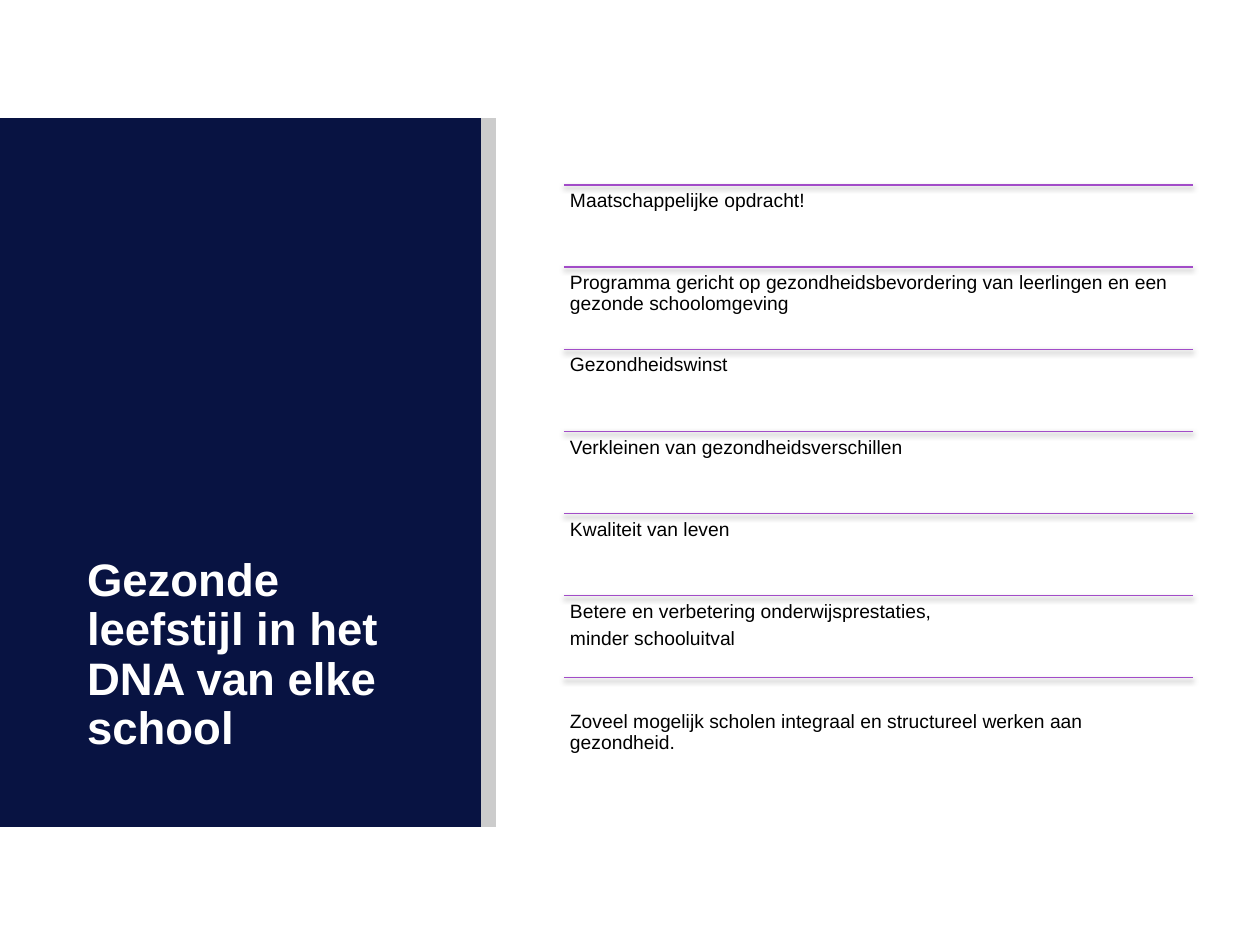
from dataclasses import dataclass

from lxml import etree
from pptx import Presentation
from pptx.dml.color import RGBColor
from pptx.enum.shapes import MSO_CONNECTOR, MSO_SHAPE
from pptx.enum.text import MSO_ANCHOR, MSO_AUTO_SIZE, PP_ALIGN
from pptx.oxml import parse_xml
from pptx.oxml.ns import nsdecls, qn
from pptx.util import Emu, Pt

RECTANGLE = MSO_SHAPE.RECTANGLE
STRAIGHT = MSO_CONNECTOR.STRAIGHT
TOP, BOTTOM = MSO_ANCHOR.TOP, MSO_ANCHOR.BOTTOM
LEFT = PP_ALIGN.LEFT
NO_AUTOFIT = MSO_AUTO_SIZE.NONE
TITLE_ONLY = 5

TITLE = "Gezonde leefstijl in het DNA van elke school"
GOALS = [
    ["Maatschappelijke opdracht!"],
    ["Programma gericht op gezondheidsbevordering van leerlingen en een gezonde schoolomgeving"],
    ["Gezondheidswinst"],
    ["Verkleinen van gezondheidsverschillen"],
    ["Kwaliteit van leven"],
    ["Betere en verbetering onderwijsprestaties,", "minder schooluitval"],
    ["Zoveel mogelijk scholen integraal en structureel werken aan gezondheid."],
]

# Left, top, width, height in px
SLIDE_SIZE = (1260, 945)
PANEL = (0, 118, 481, 709)
STRIP = (481, 118, 15, 709)
TITLE_AREA = (87, 202, 345, 558)
LIST_AREA = (564, 185, 629, 575)
INSET = 6
LAST_GOAL_DROP = 28


@dataclass(frozen=True)
class Theme:
    font: str = "Arial"
    panel: str = "081342"
    shade: str = "000000"
    strip_opacity: int = 20
    rule: str = "A24CC8"
    rule_width: float = 0.75
    title: str = "FFFFFF"
    title_size: int = 26
    body: str = "000000"
    body_size: int = 11
    line_spacing: float = 0.9
    gap: float = 3.85


THEME = Theme()


def px(length):
    return Emu(round(length * 914400 / 126))


def add_block(page, area, color, opacity=100):
    block = page.shapes.add_shape(RECTANGLE, *map(px, area))
    block.shadow.inherit = False
    block.fill.solid()
    block.fill.fore_color.rgb = RGBColor.from_string(color)
    block.line.fill.background()
    if opacity < 100:
        fill_color = block.element.spPr.find(".//" + qn("a:srgbClr"))
        etree.SubElement(fill_color, qn("a:alpha"), val=str(opacity * 1000))
    return block


def write(frame, lines, size, color, insets, anchor, bold=False, gap=0):
    """Fill a text frame; insets are left, top, right, bottom in px."""
    frame.word_wrap = True
    frame.auto_size = NO_AUTOFIT
    frame.vertical_anchor = anchor
    (frame.margin_left, frame.margin_top,
     frame.margin_right, frame.margin_bottom) = map(px, insets)
    frame.text = "\n".join(lines)
    for para in frame.paragraphs:
        para.alignment = LEFT
        para.line_spacing = THEME.line_spacing
        para.space_before = Pt(0)
        para.space_after = Pt(gap)
        for span in para.runs:
            span.font.name = THEME.font
            span.font.size = Pt(size)
            span.font.bold = bold
            span.font.color.rgb = RGBColor.from_string(color)


def add_rule(page, left, top, width):
    rule = page.shapes.add_connector(STRAIGHT, px(left), px(top), px(left + width), px(top))
    rule.line.color.rgb = RGBColor.from_string(THEME.rule)
    rule.line.width = Pt(THEME.rule_width)
    rule.element.spPr.append(parse_xml(
        f'<a:effectLst {nsdecls("a")}>'
        f'<a:outerShdw blurRad="{Pt(3.15)}" dist="{Pt(1.57)}" dir="5400000" rotWithShape="0">'
        f'<a:srgbClr val="{THEME.shade}"><a:alpha val="38000"/></a:srgbClr>'
        '</a:outerShdw></a:effectLst>'))


def add_goals(page):
    left, top, width, height = LIST_AREA
    pitch = height / len(GOALS)
    for index, lines in enumerate(GOALS):
        row_top = top + index * pitch
        drop = LAST_GOAL_DROP if index == len(GOALS) - 1 else 0
        add_rule(page, left, row_top, width)
        box = page.shapes.add_textbox(*map(px, (left, row_top, width, pitch)))
        write(box.text_frame, lines, THEME.body_size, THEME.body,
              (INSET, INSET + drop, INSET, INSET), TOP, gap=THEME.gap)


def main():
    deck = Presentation()
    deck.slide_width, deck.slide_height = map(px, SLIDE_SIZE)
    page = deck.slides.add_slide(deck.slide_layouts[TITLE_ONLY])

    title = page.shapes.title
    title.left, title.top, title.width, title.height = map(px, TITLE_AREA)
    write(title.text_frame, [TITLE], THEME.title_size, THEME.title,
          (0, INSET, 2 * INSET, INSET), BOTTOM, bold=True)

    blocks = [add_block(page, PANEL, THEME.panel),
              add_block(page, STRIP, THEME.shade, THEME.strip_opacity)]
    for block in blocks:
        title.element.addprevious(block.element)

    add_goals(page)
    deck.save("out.pptx")


if __name__ == "__main__":
    main()
